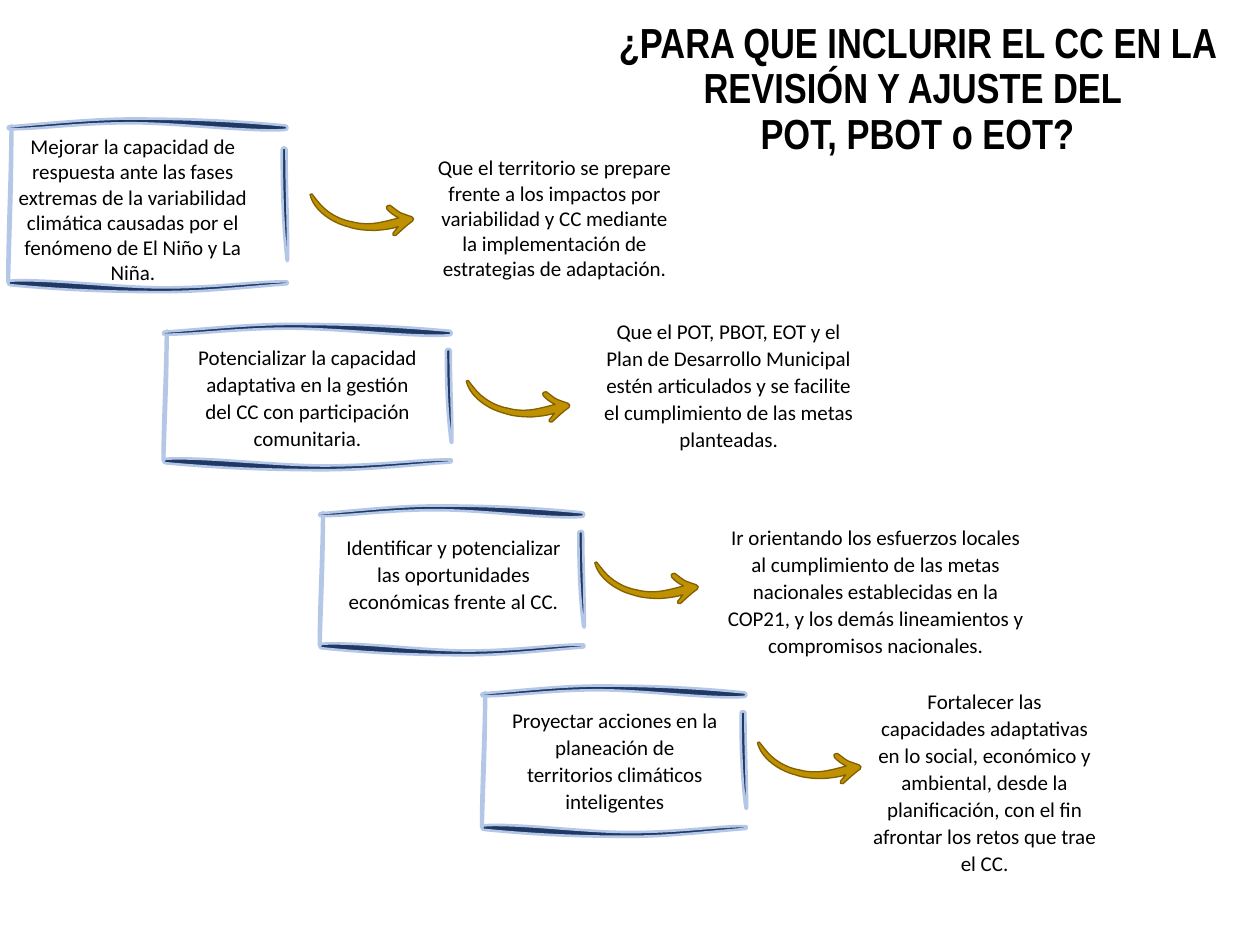
from typing import NamedTuple

from lxml import etree
from pptx import Presentation
from pptx.dml.color import RGBColor
from pptx.enum.text import MSO_ANCHOR, MSO_AUTO_SIZE, PP_ALIGN
from pptx.oxml.ns import qn
from pptx.util import Cm, Pt

CENTER = PP_ALIGN.CENTER
MIDDLE = MSO_ANCHOR.MIDDLE
FIT_SHAPE = MSO_AUTO_SIZE.SHAPE_TO_FIT_TEXT

BLACK = RGBColor(0x00, 0x00, 0x00)
NAVY = RGBColor(0x20, 0x38, 0x64)
PALE_BLUE = RGBColor(0xB4, 0xC7, 0xE7)
GOLD = RGBColor(0xBF, 0x90, 0x00)
DARK_GOLD = RGBColor(0x80, 0x60, 0x00)

STROKE_THICKNESS = 0.24
SIDE_THICKNESS = 0.13
SIDE_TOP_GAP = 0.12
SIDE_BOTTOM_GAP = 0.17
RIGHT_SIDE_SHARE = 0.72
ARROW_UNIT = 2.54

Point = tuple[float, float]


class Box(NamedTuple):
    """Left, top, width and height in centimetres."""
    left: float
    top: float
    width: float
    height: float


class Step(NamedTuple):
    frame: Box
    purpose_box: Box
    purpose: str
    arrow_at: Point
    result_box: Box
    result: str
    line_spacing: float = 1.07


# Outlines: a start point, then three points per Bézier curve, on a 100-unit grid.
TOP_STROKE = [
    (44.5, 0), (30, 0), (15, 40), (0.4, 66), (0, 68), (0, 90), (0.4, 90),
    (10, 95), (25, 40), (44, 40), (60, 40), (80, 100), (95, 100),
    (96.5, 100), (97.5, 98), (99, 96), (100, 95), (100, 60), (99, 58),
    (82, 20), (65, 0), (44.5, 0),
]
BOTTOM_STROKE = [(100 - x, 100 - y) for x, y in TOP_STROKE]
LEFT_STROKE = [
    (0, 98.5), (0, 100), (20, 100), (25, 98.5), (40, 70), (75, 41), (75, 2.5),
    (75, 0), (50, 0), (50, 2.5), (45, 35), (0, 66), (0, 98.5),
]
RIGHT_STROKE = [
    (100, 98.5), (100, 100), (80, 100), (75, 98.5), (20, 70), (0, 41), (0, 2.5),
    (0, 0), (75, 0), (75, 2.5), (75, 35), (100, 66), (100, 98.5),
]
ARROW = [
    (68, 33), (66, 34), (65, 32), (66, 31), (67, 29), (69, 28), (70, 26),
    (64, 28), (58, 28.5), (52, 29), (45, 29), (37, 28.5), (30, 26),
    (18, 23), (3, 13.5), (0, 0.5), (0, 0), (1, 0), (1.5, 0),
    (5.5, 5), (9, 10), (14.5, 14), (20, 18), (26.5, 21), (33, 22),
    (40, 24), (47, 24), (53.5, 23), (59.5, 22), (65, 20.5), (70.5, 19),
    (67, 17.5), (63.5, 15), (61, 12), (60, 11), (60.5, 9), (63.5, 9),
    (66.5, 11), (69, 13.5), (72, 15), (74.5, 16), (77.5, 17), (80.5, 18),
    (82.5, 18.5), (82.5, 20.5), (81.5, 21.5), (76.5, 25), (72.5, 29), (68, 33),
]

TITLE = "¿PARA QUE INCLURIR EL CC EN LA REVISIÓN Y AJUSTE DEL \vPOT, PBOT o EOT?"
STEPS = [
    Step(
        Box(0.15, 2.39, 5.66, 3.5), Box(0, 2.57, 5.36, 3.33),
        "Mejorar la capacidad de respuesta ante las fases extremas de la variabilidad "
        "climática causadas por el fenómeno de El Niño y La Niña.",
        (6.25, 3.91), Box(8.46, 3, 5.44, 2.82),
        "Que el territorio se prepare frente a los impactos por variabilidad y CC "
        "mediante la implementación de estrategias de adaptación.",
        line_spacing=1.0,
    ),
    Step(
        Box(3.28, 6.53, 5.84, 2.95), Box(3.66, 6.78, 5.08, 2.44),
        "Potencializar la capacidad adaptativa en la gestión del CC con "
        "participación comunitaria.",
        (9.4, 7.67), Box(11.91, 6.27, 5.56, 2.97),
        "Que el POT, PBOT, EOT y el Plan de Desarrollo Municipal estén articulados "
        "y se facilite el cumplimiento de las metas planteadas.",
    ),
    Step(
        Box(6.43, 10.19, 5.36, 3.02), Box(6.53, 10.62, 5.23, 1.9),
        "Identificar y potencializar las oportunidades económicas frente al CC.",
        (11.99, 11.33), Box(14.38, 10.41, 6.55, 3),
        "Ir orientando los esfuerzos locales al cumplimiento de las metas nacionales "
        "establecidas en la COP21, y los demás lineamientos y compromisos nacionales.",
    ),
    Step(
        Box(9.7, 13.82, 5.36, 3.05), Box(10.06, 14.1, 4.67, 2.46),
        "Proyectar acciones en la planeación de territorios climáticos inteligentes",
        (15.27, 14.96), Box(17.35, 13.72, 5, 4.09),
        "Fortalecer las capacidades adaptativas en lo social, económico y ambiental, "
        "desde la planificación, con el fin afrontar los retos que trae el CC.",
    ),
]


def bend_segments(shape) -> None:
    """Join every three straight segments into one cubic Bézier curve."""
    segments = list(shape._element.iter(qn("a:lnTo")))
    for i in range(0, len(segments), 3):
        curve = etree.Element(qn("a:cubicBezTo"))
        segments[i].addprevious(curve)
        for segment in segments[i:i + 3]:
            curve.append(segment[0])
            segment.getparent().remove(segment)


def draw_outline(slide, outline: list[Point], box: Box, fill: RGBColor,
                 edge: RGBColor, edge_width: float) -> None:
    """Draw an outline whose 100-unit grid is stretched over the box."""
    points = [(Cm(box.left + x / 100 * box.width), Cm(box.top + y / 100 * box.height))
              for x, y in outline]
    builder = slide.shapes.build_freeform(*points[0])
    builder.add_line_segments(points[1:], close=True)
    shape = builder.convert_to_shape()
    bend_segments(shape)
    shape.shadow.inherit = False
    shape.fill.solid()
    shape.fill.fore_color.rgb = fill
    shape.line.color.rgb = edge
    shape.line.width = Pt(edge_width)


def draw_frame(slide, frame: Box) -> None:
    left, top, width, height = frame
    side_height = height - SIDE_TOP_GAP - SIDE_BOTTOM_GAP
    side_top = top + SIDE_TOP_GAP
    right_height = side_height * RIGHT_SIDE_SHARE
    right_top = side_top + (side_height - right_height) / 2
    strokes = [
        (BOTTOM_STROKE, Box(left, top + height - STROKE_THICKNESS, width, STROKE_THICKNESS)),
        (RIGHT_STROKE, Box(left + width - SIDE_THICKNESS, right_top,
                           SIDE_THICKNESS, right_height)),
        (LEFT_STROKE, Box(left, side_top, SIDE_THICKNESS, side_height)),
        (TOP_STROKE, Box(left, top, width, STROKE_THICKNESS)),
    ]
    for outline, box in strokes:
        draw_outline(slide, outline, box, NAVY, PALE_BLUE, 1.5)


def add_text(slide, box: Box, text: str, font: str, size: int,
             line_spacing: float, bold: bool = False):
    text_frame = slide.shapes.add_textbox(*map(Cm, box)).text_frame
    text_frame.word_wrap = True
    text_frame.text = text
    paragraph = text_frame.paragraphs[0]
    paragraph.alignment = CENTER
    paragraph.line_spacing = line_spacing
    for run in paragraph.runs:
        run.font.name = font
        run.font.size = Pt(size)
        run.font.bold = bold
        run.font.color.rgb = BLACK
    return text_frame


def main() -> None:
    prs = Presentation()
    prs.slide_width, prs.slide_height = Cm(25.4), Cm(19.05)
    slide = prs.slides.add_slide(prs.slide_layouts[6])

    title = add_text(slide, Box(11.18, 1.5, 14.63, 0.64), TITLE, "Arial Narrow", 24, 0.9, True)
    title.vertical_anchor = MIDDLE
    title.margin_top = title.margin_bottom = Cm(0.25)

    for step in STEPS:
        draw_frame(slide, step.frame)
        draw_outline(slide, ARROW, Box(*step.arrow_at, ARROW_UNIT, ARROW_UNIT),
                     GOLD, DARK_GOLD, 0.75)
        for box, text in ((step.purpose_box, step.purpose), (step.result_box, step.result)):
            body = add_text(slide, box, text, "Calibri", 12, step.line_spacing)
            body.auto_size = FIT_SHAPE

    prs.save("out.pptx")


if __name__ == "__main__":
    main()
